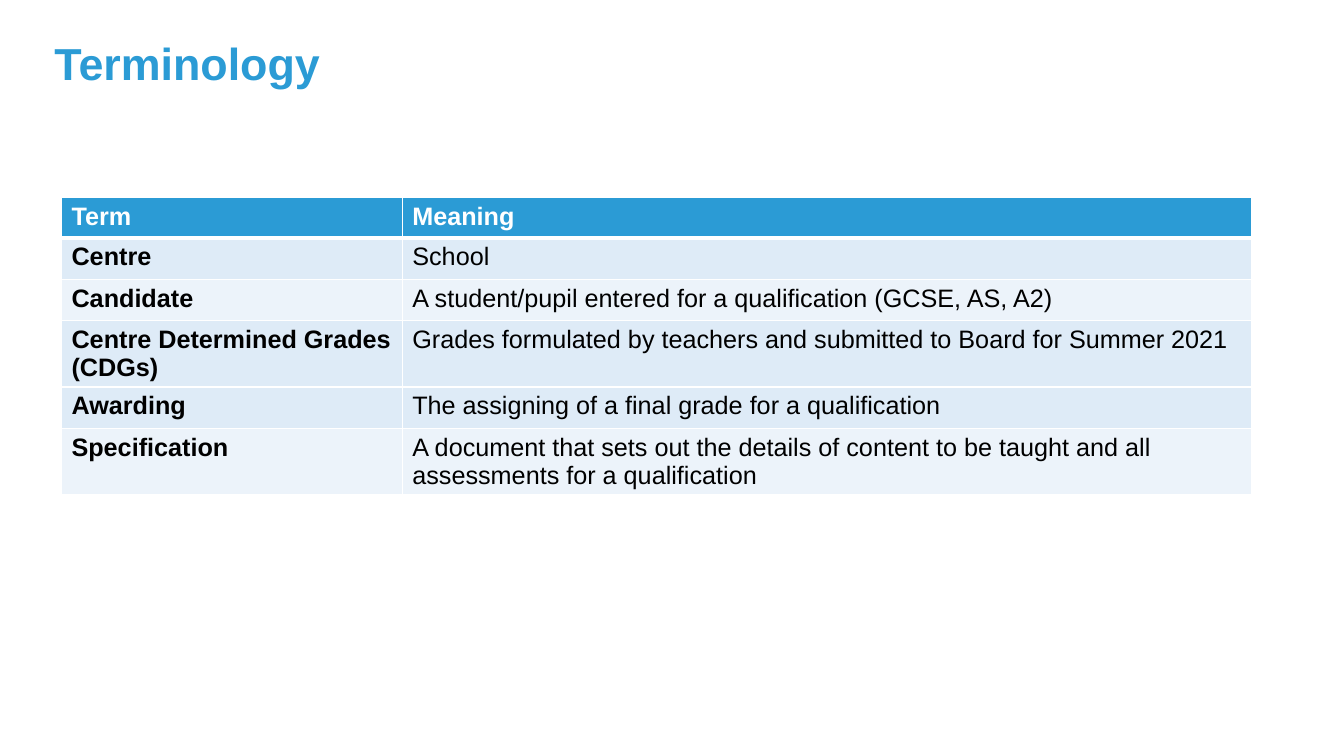
"""Build the Terminology slide: a title above a two-column glossary table."""
from dataclasses import dataclass

import lxml.etree
import pptx
import pptx.dml.color
import pptx.enum.text
import pptx.oxml.ns
import pptx.util

EMU_PER_PX = 9144


@dataclass(frozen=True)
class Theme:
    font: str = "Arial"
    accent: str = "2B9BD5"
    band_dark: str = "DEEBF7"
    band_light: str = "ECF3FA"
    white: str = "FFFFFF"
    black: str = "000000"
    title_size: int = 32
    table_size: int = 18
    thin_line: int = 1
    thick_line: int = 3


@dataclass(frozen=True)
class Entry:
    term: str
    meaning: str
    fill: str


THEME = Theme()
HEADER = Entry("Term", "Meaning", THEME.accent)
ENTRIES = [
    Entry("Centre", "School", THEME.band_dark),
    Entry("Candidate", "A student/pupil entered for a qualification (GCSE, AS, A2)", THEME.band_light),
    Entry(
        "Centre Determined Grades (CDGs)",
        "Grades formulated by teachers and submitted to Board for Summer 2021",
        THEME.band_dark,
    ),
    Entry("Awarding", "The assigning of a final grade for a qualification", THEME.band_dark),
    Entry(
        "Specification",
        "A document that sets out the details of content to be taught and all assessments for a qualification",
        THEME.band_light,
    ),
]


def px(n: int) -> pptx.util.Emu:
    return pptx.util.Emu(n * EMU_PER_PX)


def rgb(color: str) -> pptx.dml.color.RGBColor:
    return pptx.dml.color.RGBColor.from_string(color)


def add_run(p, text: str, size: int, color: str, bold: bool) -> None:
    r = p.add_run()
    r.text = text
    r.font.name = THEME.font
    r.font.size = pptx.util.Pt(size)
    r.font.bold = bold
    r.font.color.rgb = rgb(color)


def set_border(cell, side: str, width: int) -> None:
    qn = pptx.oxml.ns.qn
    tc_pr = cell._tc.get_or_add_tcPr()
    ln = lxml.etree.SubElement(tc_pr, qn(f"a:ln{side}"), w=str(pptx.util.Pt(width)))
    fill = lxml.etree.SubElement(ln, qn("a:solidFill"))
    lxml.etree.SubElement(fill, qn("a:srgbClr"), val=THEME.white)


def fill_cell(cell, text: str, fill: str, color: str, bold: bool, top: int, bottom: int) -> None:
    widths = {"L": THEME.thin_line, "R": THEME.thin_line, "T": top, "B": bottom}
    for side, width in widths.items():
        set_border(cell, side, width)
    cell.fill.solid()
    cell.fill.fore_color.rgb = rgb(fill)
    add_run(cell.text_frame.paragraphs[0], text, THEME.table_size, color, bold)


def add_title(s, text: str) -> None:
    sp = s.shapes.title
    sp.left, sp.top, sp.width, sp.height = px(44), px(36), px(1055), px(120)
    tf = sp.text_frame
    tf.word_wrap = True
    tf.vertical_anchor = pptx.enum.text.MSO_ANCHOR.TOP
    p = tf.paragraphs[0]
    p.alignment = pptx.enum.text.PP_ALIGN.LEFT
    p.line_spacing = 0.9
    add_run(p, text, THEME.title_size, THEME.accent, True)


def add_glossary(s) -> None:
    rows = [HEADER, *ENTRIES]
    frame = s.shapes.add_table(len(rows), 2, px(61), px(196), px(1180), px(302))
    table = frame.table
    table.horz_banding = False
    for column, width in zip(table.columns, (338, 842)):
        column.width = px(width)
    for i, entry in enumerate(rows):
        header = i == 0
        table.rows[i].height = px(40 if header else 41)
        color = THEME.white if header else THEME.black
        top = THEME.thick_line if i == 1 else THEME.thin_line
        bottom = THEME.thick_line if header else THEME.thin_line
        for j, text in enumerate((entry.term, entry.meaning)):
            fill_cell(table.cell(i, j), text, entry.fill, color, header or j == 0, top, bottom)
    frame.height = px(302)


def main() -> None:
    prs = pptx.Presentation()
    prs.slide_width, prs.slide_height = px(1333), px(750)
    s = prs.slides.add_slide(prs.slide_layouts[5])
    add_title(s, "Terminology")
    add_glossary(s)
    prs.save("out.pptx")


if __name__ == "__main__":
    main()
